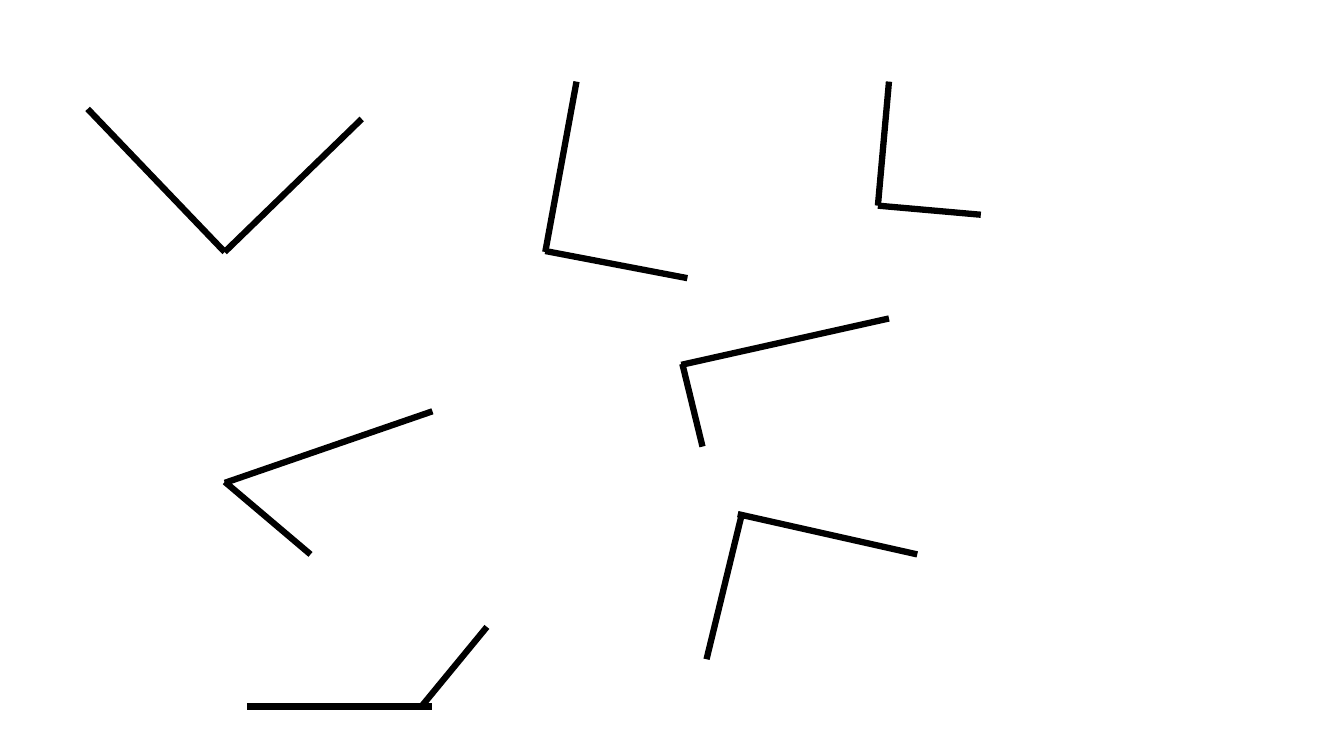
from lxml.etree import SubElement
from pptx import Presentation
from pptx.dml.color import RGBColor
from pptx.enum.shapes import MSO_CONNECTOR as Connector
from pptx.oxml.ns import qn
from pptx.util import Pt

BLACK = RGBColor(0, 0, 0)
WHITE = RGBColor(255, 255, 255)
ARM_WIDTH = 4.5

# Each angle: left and top of its box, then its two arms (x1, y1, x2, y2) within the box
ANGLES = [
    # Top row
    (62.6, 77.8, [(0, 0, 97.9, 102.2), (97.9, 102.2, 195.8, 7.2)]),
    (389.5, 58.3, [(22.3, 0, 0, 121.7), (101.5, 140.4, 0, 121)]),
    (627.1, 58.3, [(0, 88.6, 7.9, 0), (0, 88.6, 73.5, 95.1)]),
    # Middle row
    (160.6, 293.8, [(148.3, 0, 0, 51.1), (61.2, 102.2, 0, 50.4)]),
    (486.7, 227.5, [(0, 33.1, 148.3, 0), (15.1, 91.5, 0.7, 32.4)]),
    # Bottom row
    (176.4, 447.8, [(0, 56.9, 132.5, 56.9), (124.6, 56.9, 171.4, 0)]),
    (504.7, 367.2, [(22.3, 0, 150.5, 28.8), (25.2, 0, 0, 103.7)]),
]


def draw_angle(slide, left, top, arms):
    """Draw the two arms of one angle inside the box at left, top."""
    for x1, y1, x2, y2 in arms:
        arm = slide.shapes.add_connector(
            Connector.STRAIGHT,
            Pt(left + x1), Pt(top + y1), Pt(left + x2), Pt(top + y2))
        arm.line.color.rgb = BLACK
        arm.line.width = Pt(ARM_WIDTH)
        # No shadow
        SubElement(arm._element.spPr, qn("a:effectLst"))


def build_angles_slide(presentation):
    slide = presentation.slides.add_slide(presentation.slide_layouts[6])
    slide.background.fill.solid()
    slide.background.fill.fore_color.rgb = WHITE
    for left, top, arms in ANGLES:
        draw_angle(slide, left, top, arms)


def main():
    presentation = Presentation()
    presentation.slide_width = Pt(960)
    presentation.slide_height = Pt(540)
    build_angles_slide(presentation)
    presentation.save("out.pptx")


if __name__ == "__main__":
    main()
